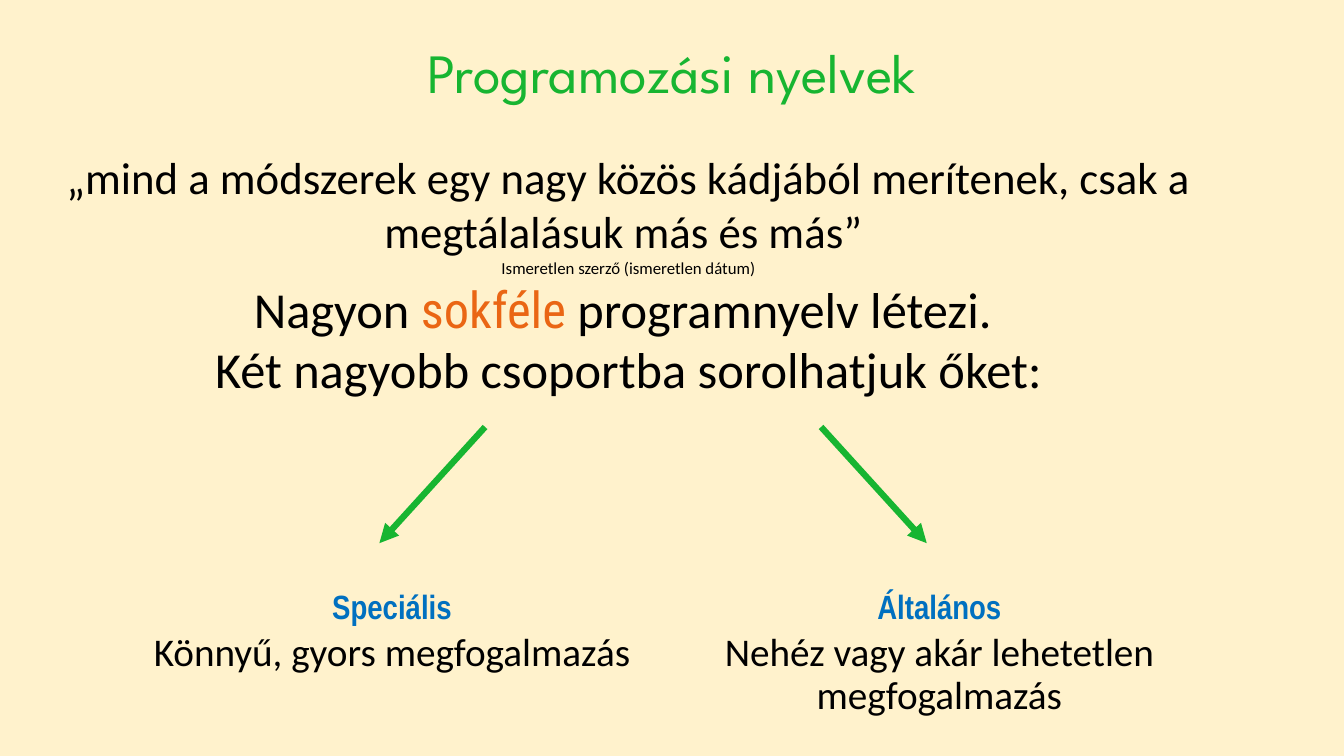
from lxml.etree import SubElement
from pptx import Presentation
from pptx.dml.color import RGBColor
from pptx.enum.shapes import MSO_CONNECTOR
from pptx.enum.text import MSO_ANCHOR, MSO_AUTO_SIZE, PP_ALIGN
from pptx.oxml.ns import qn
from pptx.util import Pt

GREEN, BLUE, ORANGE, BLACK, CREAM = "17B531", "0070C0", "EA6614", "000000", "FFF2CC"

TITLE_STYLE = {"name": "League Spartan", "size": Pt(39.6), "bold": False, "color": GREEN}
HEADING_STYLE = {"name": "Arial Narrow", "size": Pt(24), "bold": True, "color": BLUE}
DETAIL_STYLE = {"name": "Calibri", "size": Pt(28), "bold": False, "color": BLACK}
QUOTE_STYLE = {**DETAIL_STYLE, "size": Pt(32)}
SOURCE_STYLE = {**DETAIL_STYLE, "size": Pt(12)}
LEAD_STYLE = {**DETAIL_STYLE, "size": Pt(36)}
ACCENT_STYLE = {**LEAD_STYLE, "name": "Roboto Condensed", "color": ORANGE}

TITLE = "Programozási nyelvek"
INTRO = [
    [
        ("„mind a módszerek egy nagy közös kádjából merítenek, csak a megtálalásuk más és más” \n", QUOTE_STYLE),
        ("Ismeretlen szerző (ismeretlen dátum)", SOURCE_STYLE),
    ],
    [
        ("Nagyon ", LEAD_STYLE),
        ("sokféle", ACCENT_STYLE),
        (" programnyelv létezi. \nKét nagyobb csoportba sorolhatjuk őket:", LEAD_STYLE),
    ],
]
GROUPS = [
    {"heading": "Speciális", "detail": "Könnyű, gyors megfogalmazás",
     "center": 280, "height": 57, "arrow": (346.5, 271)},
    {"heading": "Általános", "detail": "Nehéz vagy akár lehetetlen megfogalmazás",
     "center": 671, "height": 85, "arrow": (586.5, 662)},
]
HEADING_TOP, HEADING_WIDTH, HEADING_HEIGHT = 412.5, 133, 65
DETAIL_TOP, DETAIL_WIDTH = 448.5, 368.6
ARROW_TOP, ARROW_BOTTOM = 305, 388


def color(value):
    return RGBColor.from_string(value)


def place(box, left, top, width, height):
    values = {"left": left, "top": top, "width": width, "height": height}
    for name, value in values.items():
        setattr(box, name, Pt(value))


def add_span(para, text, style):
    for index, line in enumerate(text.split("\n")):
        if index:
            para.add_line_break()
        if line:
            span = para.add_run()
            span.text = line
            for name, value in style.items():
                if name == "color":
                    span.font.color.rgb = color(value)
                else:
                    setattr(span.font, name, value)


def write(box, paragraphs, para_format, margin_top=3.6):
    frame = box.text_frame
    frame_format = {"word_wrap": True, "auto_size": MSO_AUTO_SIZE.NONE,
                    "vertical_anchor": MSO_ANCHOR.TOP, "margin_top": Pt(margin_top)}
    for name, value in frame_format.items():
        setattr(frame, name, value)
    for index, spans in enumerate(paragraphs):
        para = frame.add_paragraph() if index else frame.paragraphs[0]
        for name, value in {"alignment": PP_ALIGN.CENTER, **para_format}.items():
            setattr(para, name, value)
        for text, style in spans:
            add_span(para, text, style)
        if box.is_placeholder:
            properties = para._p.get_or_add_pPr()
            properties.set("marL", "0")
            properties.set("indent", "0")
            SubElement(properties, qn("a:buNone"))


def add_arrow(page, start, end):
    arrow = page.shapes.add_connector(
        MSO_CONNECTOR.STRAIGHT, Pt(start), Pt(ARROW_TOP), Pt(end), Pt(ARROW_BOTTOM))
    arrow.line.color.rgb = color(GREEN)
    arrow.line.width = Pt(4.5)
    SubElement(arrow.line._get_or_add_ln(), qn("a:tailEnd"), type="triangle")
    SubElement(arrow._element.spPr, qn("a:effectLst"))


def main():
    deck = Presentation()
    deck.slide_width, deck.slide_height = Pt(960), Pt(540)
    page = deck.slides.add_slide(deck.slide_layouts.get_by_name("Comparison"))
    page.background.fill.solid()
    page.background.fill.fore_color.rgb = color(CREAM)

    title = page.shapes.title
    place(title, 66, 28.8, 828, 75)
    write(title, [[(TITLE, TITLE_STYLE)]], {"line_spacing": 0.9})

    body_format = {"line_spacing": 0.9, "space_before": Pt(10)}
    for index, group in enumerate(GROUPS):
        heading = page.placeholders[1 + 2 * index]
        detail = page.placeholders[2 + 2 * index]
        place(heading, group["center"] - HEADING_WIDTH / 2, HEADING_TOP, HEADING_WIDTH, HEADING_HEIGHT)
        place(detail, group["center"] - DETAIL_WIDTH / 2, DETAIL_TOP, DETAIL_WIDTH, group["height"])
        write(heading, [[(group["heading"], HEADING_STYLE)]], body_format, margin_top=9)
        write(detail, [[(group["detail"], DETAIL_STYLE)]], body_format)

    intro = page.shapes.add_textbox(Pt(31), Pt(103.7), Pt(836), Pt(186.5))
    write(intro, INTRO, {})

    for group in GROUPS:
        add_arrow(page, *group["arrow"])
    deck.save("out.pptx")


if __name__ == "__main__":
    main()
